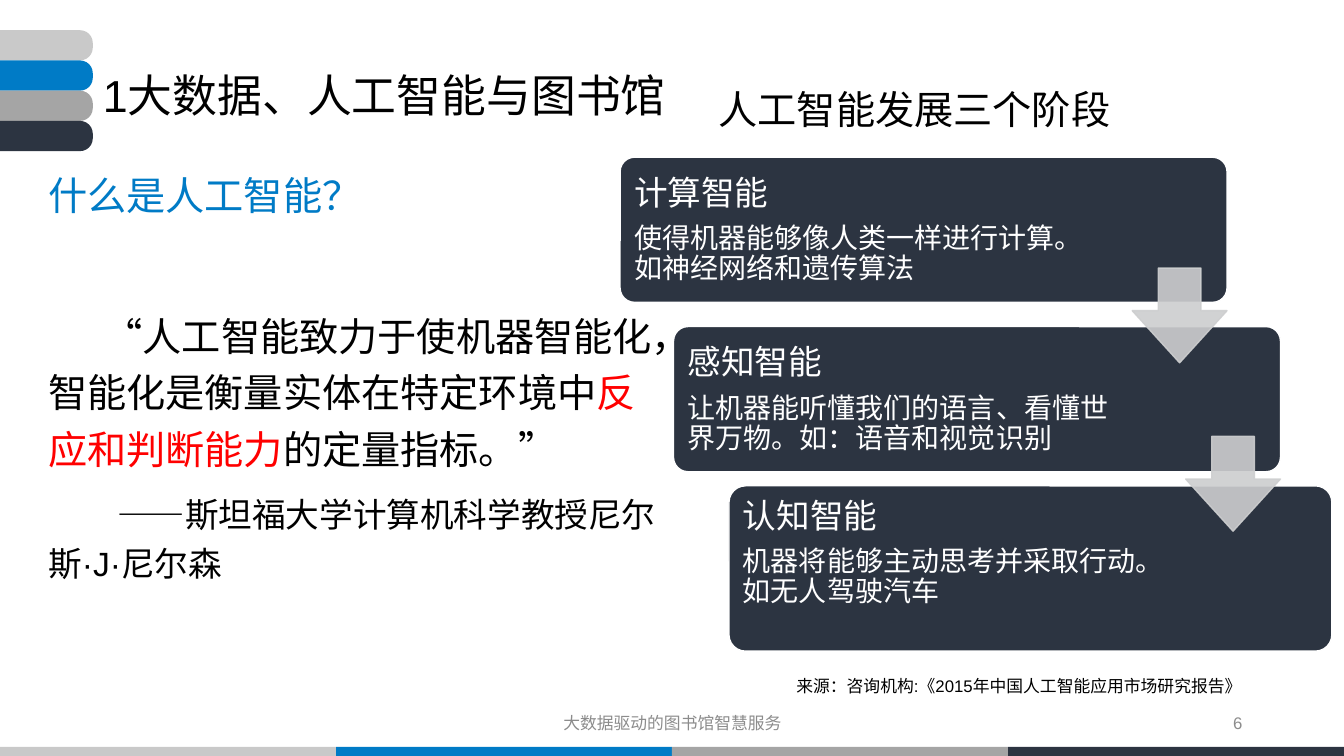
import pptx
import pptx.dml.color
import pptx.enum.shapes
import pptx.enum.text
import pptx.oxml
import pptx.oxml.ns
import pptx.util

Inches = pptx.util.Inches
Pt = pptx.util.Pt
SHAPE = pptx.enum.shapes.MSO_SHAPE
ANCHOR = pptx.enum.text.MSO_ANCHOR
ALIGN = pptx.enum.text.PP_ALIGN

BLACK, WHITE, RED = "000000", "FFFFFF", "FF0000"
BLUE, NAVY, MUTED, ARROW = "007BC6", "2C3441", "8C8C8C", "CDCECF"
BAND_COLORS = ["C9C9C9", BLUE, "A5A5A5", NAVY]


def color(value):
    return pptx.dml.color.RGBColor.from_string(value)


class SlideBuilder:
    font_name = "Arial"

    def __init__(self, slide):
        self.slide = slide

    def format_runs(self, paragraph, size, *fills):
        for run, fill in zip(paragraph.runs, fills):
            run.font.name = self.font_name
            run.font.size = Pt(size)
            run.font.color.rgb = color(fill)

    def title(self, box, text):
        shape = self.slide.shapes.title
        shape.left, shape.top, shape.width, shape.height = map(Inches, box)
        frame = shape.text_frame
        frame.text = text
        frame.vertical_anchor = ANCHOR.MIDDLE
        paragraph = frame.paragraphs[0]
        paragraph.alignment = ALIGN.LEFT
        paragraph.line_spacing = 1.2
        self.format_runs(paragraph, 32, BLACK)

    def shape(self, kind, box, fill, line=None, adjustments=(), alpha=None):
        shape = self.slide.shapes.add_shape(kind, *map(Inches, box))
        shape.shadow.inherit = False
        for index, value in enumerate(adjustments):
            shape.adjustments[index] = value
        shape.fill.solid()
        shape.fill.fore_color.rgb = color(fill)
        if line:
            shape.line.color.rgb = color(line)
            shape.line.width = Pt(1)
        else:
            shape.line.fill.background()
        if alpha:
            for node in shape.element.spPr.iter(pptx.oxml.ns.qn("a:srgbClr")):
                pptx.oxml.ns.qn("a:alpha")
                opacity = pptx.oxml.parse_xml(
                    f'<a:alpha {pptx.oxml.ns.nsdecls("a")} val="{alpha * 1000}"/>'
                )
                node.append(opacity)
        return shape

    def text_frame(self, box, anchor=ANCHOR.TOP):
        frame = self.slide.shapes.add_textbox(*map(Inches, box)).text_frame
        frame.word_wrap = True
        frame.vertical_anchor = anchor
        return frame

    def label(self, box, text, size, fill, align=ALIGN.LEFT,
              anchor=ANCHOR.TOP, spacing=1.0):
        frame = self.text_frame(box, anchor)
        frame.text = text
        paragraph = frame.paragraphs[0]
        paragraph.alignment = align
        paragraph.line_spacing = spacing
        self.format_runs(paragraph, size, fill)

    def passage(self, box, entries):
        frame = self.text_frame(box)
        for index, (size, before, indent, parts) in enumerate(entries):
            paragraph = frame.add_paragraph() if index else frame.paragraphs[0]
            paragraph.line_spacing = 1.2
            paragraph.space_before = Pt(before)
            paragraph._p.get_or_add_pPr().set("indent", str(Inches(indent)))
            for text, fill in parts:
                paragraph.add_run().text = text
            self.format_runs(paragraph, size, *[fill for text, fill in parts])

    def card(self, box, text_width, bottom_inset, heading, body):
        self.shape(SHAPE.ROUNDED_RECTANGLE, box, NAVY, WHITE, [0.1])
        left, top, width, height = box
        frame = self.text_frame(
            (left + 0.04, top + 0.05, text_width, height - 0.08), ANCHOR.MIDDLE)
        frame.margin_left = frame.margin_right = frame.margin_top = Inches(0.1)
        frame.margin_bottom = Inches(bottom_inset)
        frame.text = f"{heading}\n{body}"
        for paragraph, size in zip(frame.paragraphs, (24, 20)):
            paragraph.line_spacing = 0.9
            paragraph.space_after = Pt(8.4)
            self.format_runs(paragraph, size, WHITE)


def main():
    presentation = pptx.Presentation()
    presentation.slide_width = Inches(13.33)
    presentation.slide_height = Inches(7.5)
    slide = presentation.slides.add_slide(presentation.slide_layouts[5])
    builder = SlideBuilder(slide)

    band_width = 13.33 / len(BAND_COLORS)
    for index, fill in enumerate(BAND_COLORS):
        builder.shape(SHAPE.RECTANGLE,
                      (index * band_width, 7.41, band_width, 0.12), fill)
        tab = builder.shape(SHAPE.ROUND_2_SAME_RECTANGLE,
                            (0.31, 0.3 * index - 0.01, 0.3, 0.92), fill,
                            adjustments=[0.42, 0])
        tab.rotation = 90

    builder.title((0.92, 0.16, 11.5, 1.45), "1大数据、人工智能与图书馆")
    builder.label((4.42, 6.95, 4.5, 0.4), "大数据驱动的图书馆智慧服务", 12,
                  MUTED, ALIGN.CENTER, ANCHOR.MIDDLE, 1.2)
    builder.label((9.42, 6.95, 3, 0.4), "6", 12,
                  MUTED, ALIGN.RIGHT, ANCHOR.MIDDLE, 1.2)

    builder.passage((0.38, 1.56, 6.28, 5.45), [
        (28, 10, 0, [("什么是人工智能？", BLUE)]),
        (28, 60, 0.55, [
            ("“人工智能致力于使机器智能化，智能化是衡量实体在特定环境中", BLACK),
            ("反应和判断能力", RED),
            ("的定量指标。”", BLACK),
        ]),
        (24, 10, 0.69, [("——斯坦福大学计算机科学教授尼尔斯·J·尼尔森", BLACK)]),
    ])

    builder.card((6.15, 1.56, 6.02, 1.44), 4.47, 0.1, "计算智能",
                 "使得机器能够像人类一样进行计算。如神经网络和遗传算法")
    builder.card((6.68, 3.24, 6.02, 1.44), 4.47, 0.1, "感知智能",
                 "让机器能听懂我们的语言、看懂世界万物。如：语音和视觉识别")
    builder.card((7.23, 4.82, 5.98, 1.64), 4.43, 0.42, "认知智能",
                 "机器将能够主动思考并采取行动。如无人驾驶汽车")
    for left, top in ((11.23, 2.66), (11.76, 4.33)):
        builder.shape(SHAPE.DOWN_ARROW, (left, top, 0.94, 0.94), ARROW, ARROW,
                      [0.45, 0.55], alpha=90)

    builder.label((7.03, 0.8, 5.33, 0.57), "人工智能发展三个阶段", 28, BLACK)
    builder.label((7.8, 6.65, 4.62, 0.3),
                  "来源：咨询机构:《2015年中国人工智能应用市场研究报告》", 12, BLACK)

    presentation.save("out.pptx")


if __name__ == "__main__":
    main()
